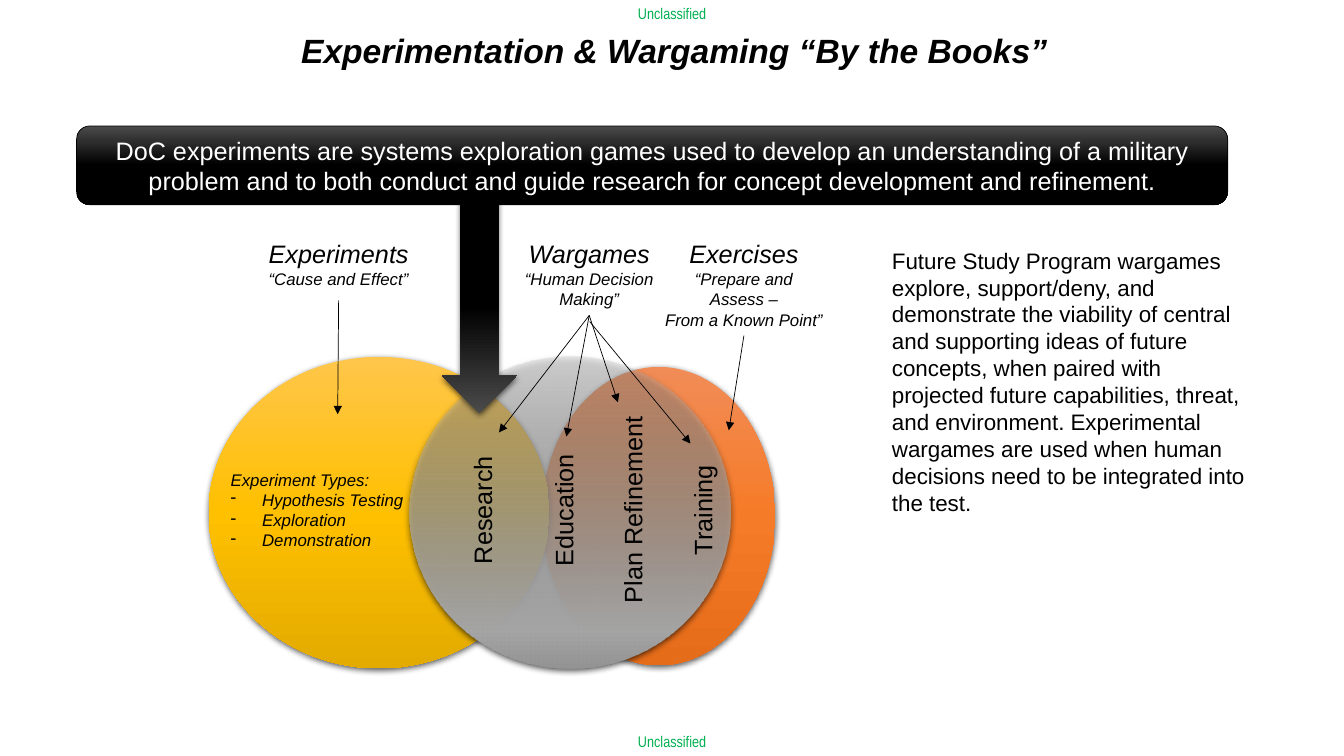
from lxml.etree import SubElement
from pptx import Presentation
from pptx.dml.color import RGBColor
from pptx.enum.shapes import MSO_CONNECTOR as Line, MSO_SHAPE as Shape
from pptx.enum.text import MSO_ANCHOR as Anchor, MSO_AUTO_SIZE as Fit, PP_ALIGN as Align
from pptx.oxml.ns import qn
from pptx.util import Pt

TITLE = "Experimentation & Wargaming “By the Books”"
BANNER = ("DoC experiments are systems exploration games used to develop an understanding of a "
          "military problem and to both conduct and guide research for concept development and "
          "refinement.")
PROGRAM = ("Future Study Program wargames explore, support/deny, and demonstrate the viability of "
           "central and supporting ideas of future concepts, when paired with projected future "
           "capabilities, threat, and environment. Experimental wargames are used when human "
           "decisions need to be integrated into the test.")
TYPES = ["Experiment Types:", "Hypothesis Testing", "Exploration", "Demonstration"]
MARKING = "Unclassified"

BLACK_FADE = [(0, "4B4B4B", 100), (50, "000000", 100), (100, "000000", 100)]
CIRCLES = [
    ((387.4, 262.1, 166.3, 213.1),
     [(0, "F18C57", 100), (50, "F67B28", 100), (100, "E56C19", 100)]),
    ((149, 254.9, 243.4, 222.5),
     [(0, "FFC64B", 100), (50, "FFC000", 100), (100, "E3AB00", 100)]),
    ((292.3, 254.9, 229.7, 222.5),
     [(0, "AFAFAF", 25), (88, "A5A5A5", 100), (100, "939393", 100)]),
]
HEADINGS = [
    (["Experiments", "“Cause and Effect”"], (184.3, 167, 115.2, 43.9)),
    (["Wargames", "“Human Decision", "Making”"], (365.8, 167, 110.2, 58.3)),
    (["Exercises", "“Prepare and", "Assess –", "From a Known Point”"], (467.3, 167, 128.2, 72.7)),
]
USES = [("Research", 344.5, 131.8), ("Education", 402.5, 95),
        ("Plan Refinement", 451.8, 149), ("Training", 501.8, 79.2)]
USE_MIDDLE, USE_HEIGHT = 364.3, 28.8
JOINED_ARROWS = [("Exercises", (520.6, 307.4)), ("Wargames", (356.4, 308.9)),
                 ("Wargames", (441.4, 287.3)), ("Wargames", (404.6, 311.8))]
FREE_ARROWS = [((241.9, 214.6), (241.2, 295.9)), ((421.2, 229.7), (493.2, 316.8))]


def color(value):
    return RGBColor.from_string(value)


def format_para(para, size, value="000000", italic=False, align=Align.LEFT, font="Arial"):
    para.alignment = align
    for span in para.runs:
        span.font.name = font
        span.font.size = Pt(size)
        span.font.italic = italic
        span.font.color.rgb = color(value)


def add_text(lines, frame, sizes, wrap=False, **style):
    box = slide.shapes.add_textbox(*map(Pt, frame))
    text = box.text_frame
    text.word_wrap = wrap
    text.auto_size = Fit.SHAPE_TO_FIT_TEXT
    text.text = "\n".join(lines)
    for number, para in enumerate(text.paragraphs):
        format_para(para, sizes[min(number, len(sizes) - 1)], **style)
    return box


def add_faded(kind, frame, stops, shadow=True):
    shape = slide.shapes.add_shape(kind, *map(Pt, frame))
    shape.shadow.inherit = False
    shape.line.fill.background()
    shape.fill.gradient()
    shape.fill.gradient_angle = 270
    properties = shape.element.spPr
    stop_list = properties.find(qn("a:gradFill")).find(qn("a:gsLst"))
    for stop in list(stop_list):
        stop_list.remove(stop)
    for position, value, opacity in stops:
        stop = SubElement(stop_list, qn("a:gs"), pos=str(position * 1000))
        tint = SubElement(stop, qn("a:srgbClr"), val=value)
        if opacity < 100:
            SubElement(tint, qn("a:alpha"), val=str(opacity * 1000))
    if shadow:
        effects = properties.find(qn("a:effectLst"))
        outer = SubElement(effects, qn("a:outerShdw"), blurRad=str(Pt(4.5)), dist=str(Pt(1.5)),
                           dir="5400000", rotWithShape="0")
        tint = SubElement(outer, qn("a:srgbClr"), val="000000")
        SubElement(tint, qn("a:alpha"), val="63000")
    return shape


def add_arrow(start, end, source=None):
    arrow = slide.shapes.add_connector(Line.STRAIGHT, *map(Pt, start + end))
    if source:
        arrow.begin_connect(source, 2)
    arrow.line.color.rgb = color("000000")
    arrow.line.width = Pt(0.5)
    SubElement(arrow.line._get_or_add_ln(), qn("a:tailEnd"), type="triangle")
    SubElement(arrow.element.spPr, qn("a:effectLst"))


deck = Presentation()
deck.slide_width, deck.slide_height = Pt(960), Pt(540)
slide = deck.slides.add_slide(deck.slide_layouts[5])

title = slide.shapes.title
title.left, title.top, title.width, title.height = map(Pt, (108, 20.9, 647.3, 39.6))
title.text_frame.text = TITLE
title.text_frame.vertical_anchor = Anchor.TOP
title.text_frame.auto_size = Fit.NONE
heading = title.text_frame.paragraphs[0]
heading.line_spacing = 0.9
format_para(heading, 24, italic=True, align=Align.RIGHT)
heading.runs[0].font.bold = True

for frame, stops in CIRCLES:
    add_faded(Shape.OVAL, frame, stops)
pointer = add_faded(Shape.UP_ARROW, (315.4, 141.8, 54, 153.4), BLACK_FADE)
pointer.rotation = 180

banner = add_faded(Shape.ROUNDED_RECTANGLE, (54.7, 90, 822.2, 56.2), BLACK_FADE, shadow=False)
banner.line.color.rgb = color("000000")
banner.line.width = Pt(0.5)
banner.text_frame.word_wrap = True
banner.text_frame.vertical_anchor = Anchor.MIDDLE
banner.text_frame.text = BANNER
format_para(banner.text_frame.paragraphs[0], 18, "FFFFFF", align=Align.CENTER)

heading_boxes = {}
for lines, frame in HEADINGS:
    heading_boxes[lines[0]] = add_text(lines, frame, [18, 12], italic=True, align=Align.CENTER)

for use, center, width in USES:
    frame = (center - width / 2, USE_MIDDLE - USE_HEIGHT / 2, width, USE_HEIGHT)
    add_text([use], frame, [18], align=Align.CENTER).rotation = 270

add_text([PROGRAM], (630, 172.8, 267.8, 200.9), [16], wrap=True)

types = add_text(TYPES, (157.7, 331.9, 360, 65.5), [12], wrap=True, italic=True)
for para in types.text_frame.paragraphs[1:]:
    settings = para._p.get_or_add_pPr()
    settings.set("marL", str(Pt(22.5)))
    settings.set("indent", str(-Pt(22.5)))
    SubElement(settings, qn("a:buChar"), char="-")

for name, end in JOINED_ARROWS:
    add_arrow((0, 0), end, heading_boxes[name])
for start, end in FREE_ARROWS:
    add_arrow(start, end)

for top in (-0.7, 519.1):
    add_text([MARKING], (448.6, top, 63.4, 20.9), [11], value="00B050", font="Arial Narrow")

deck.save("out.pptx")
